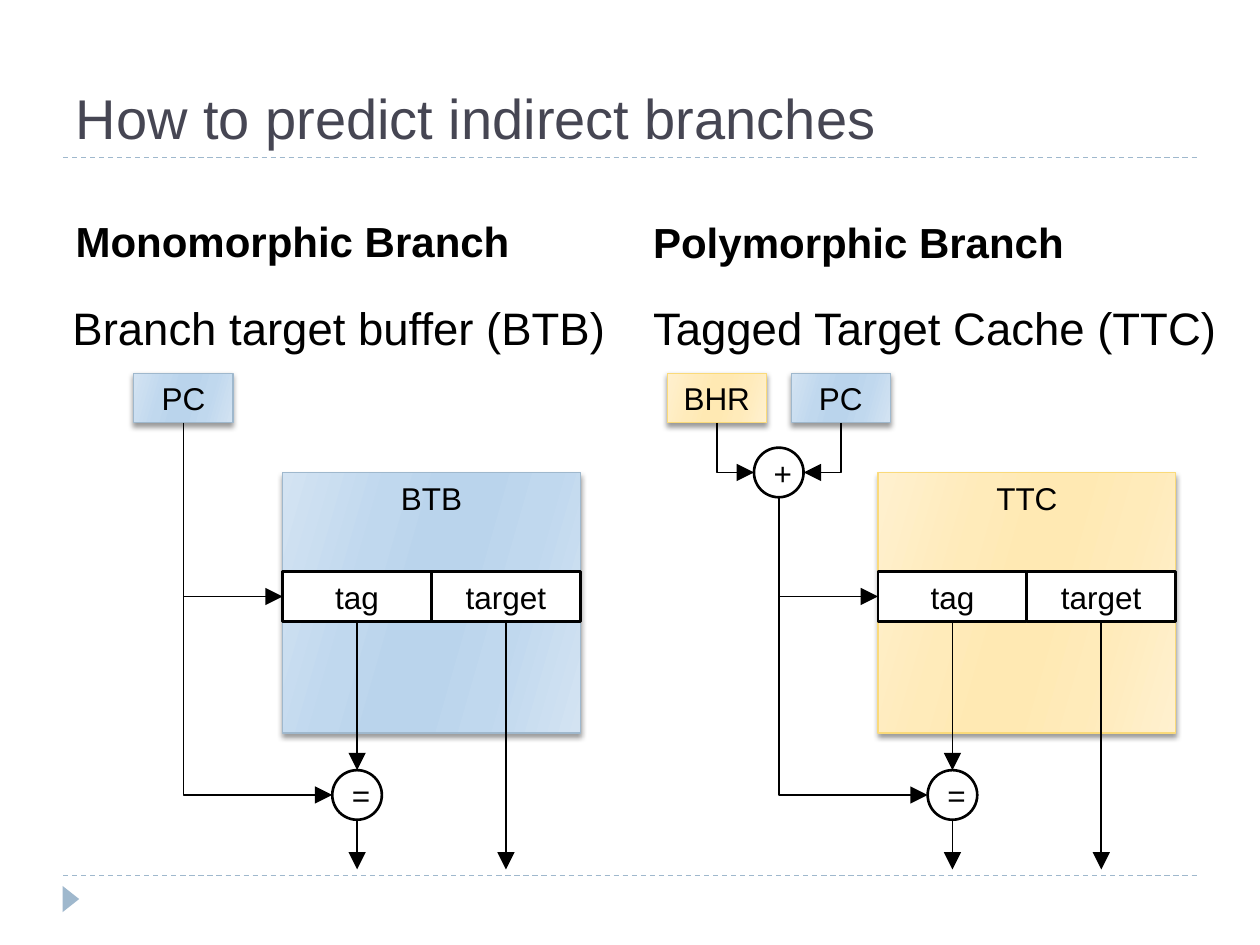
import pptx
import pptx.dml.color
import pptx.enum.dml
import pptx.enum.shapes
import pptx.enum.text
import pptx.oxml
import pptx.oxml.ns
import pptx.util

Pt = pptx.util.Pt
RGBColor = pptx.dml.color.RGBColor
SHAPE = pptx.enum.shapes.MSO_SHAPE
STRAIGHT = pptx.enum.shapes.MSO_CONNECTOR.STRAIGHT
ANCHOR = pptx.enum.text.MSO_ANCHOR
ALIGN = pptx.enum.text.PP_ALIGN
NS = pptx.oxml.ns.nsdecls("a")

BLACK = RGBColor(0x00, 0x00, 0x00)
WHITE = RGBColor(0xFF, 0xFF, 0xFF)
SLATE = RGBColor(0x46, 0x46, 0x53)
STEEL = RGBColor(0x9F, 0xB8, 0xCD)
GOLD = RGBColor(0xFA, 0xDA, 0x7A)
BLUES = [RGBColor(0xD3, 0xE3, 0xF2), RGBColor(0xC0, 0xD8, 0xEE), RGBColor(0xBA, 0xD4, 0xEC)]
YELLOWS = [RGBColor(0xFF, 0xF0, 0xCF), RGBColor(0xFF, 0xEB, 0xBA), RGBColor(0xFF, 0xE9, 0xB3)]
GRADIENT_STOPS = [(0, 0), (30, 1), (45, 2), (55, 2), (73, 1), (100, 0)]

UNIT = 28.35
TOP = 213.3
BTB_LEFT = 76.5
TTC_LEFT = BTB_LEFT + 12 * UNIT


def write(holder, text, size=18, color=BLACK, bold=False, align=ALIGN.CENTER,
          anchor=ANCHOR.MIDDLE, before=0):
    frame = holder.text_frame
    frame.word_wrap = True
    frame.auto_size = pptx.enum.text.MSO_AUTO_SIZE.NONE
    frame.vertical_anchor = anchor
    paragraph = frame.paragraphs[0]
    paragraph.alignment = align
    paragraph.space_before = Pt(before)
    run = paragraph.add_run()
    run.text = text
    run.font.name = "Arial"
    run.font.size = Pt(size)
    run.font.bold = bold
    run.font.color.rgb = color


prs = pptx.Presentation()
prs.slide_width, prs.slide_height = Pt(720), Pt(540)
slide = prs.slides.add_slide(prs.slide_layouts[4])
shapes = slide.shapes

for y in (90, 500.4):
    rule = shapes.add_connector(STRAIGHT, Pt(36), Pt(y), Pt(684), Pt(y))
    rule.line.color.rgb = STEEL
    rule.line.width = Pt(0.75)
    rule.line.dash_style = pptx.enum.dml.MSO_LINE.DASH
    rule._element.spPr.append(pptx.oxml.parse_xml(f"<a:effectLst {NS}/>"))

marker = shapes.add_shape(SHAPE.ISOSCELES_TRIANGLE, Pt(33), Pt(509), Pt(15), Pt(9.5))
marker.rotation = 90
marker.shadow.inherit = False
marker.fill.solid()
marker.fill.fore_color.rgb = STEEL
marker.line.fill.background()

headings = [
    (0, "How to predict indirect branches", (36, 18, 648, 72),
     dict(size=32, color=SLATE, anchor=ANCHOR.BOTTOM, align=ALIGN.LEFT)),
    (1, "Monomorphic Branch", (36, 101.5, 318, 54),
     dict(size=24, bold=True, anchor=ANCHOR.BOTTOM, align=ALIGN.LEFT, before=6)),
    (3, "Polymorphic Branch", (366, 102, 318, 54),
     dict(size=24, bold=True, anchor=ANCHOR.BOTTOM, align=ALIGN.LEFT, before=6)),
    (2, "Branch target buffer (BTB)", (26.5, 168, 327, 45),
     dict(size=26, anchor=ANCHOR.TOP, align=ALIGN.RIGHT, before=6)),
    (4, "Tagged Target Cache (TTC)", (366, 168, 341, 45),
     dict(size=26, anchor=ANCHOR.TOP, align=ALIGN.LEFT, before=6)),
]
for index, text, box, style in headings:
    heading = slide.placeholders[index]
    heading.left, heading.top, heading.width, heading.height = map(Pt, box)
    write(heading, text, **style)
    if index:
        properties = heading.text_frame.paragraphs[0]._p.get_or_add_pPr()
        properties.set("marL", "0")
        properties.set("indent", "0")
        properties.append(pptx.oxml.parse_xml(f"<a:buNone {NS}/>"))

blocks = [
    (BTB_LEFT, 3, 2, 6, 5.25, "BTB", BLUES, STEEL),
    (BTB_LEFT, 0, 0, 2, 1, "PC", BLUES, STEEL),
    (TTC_LEFT, 3, 2, 6, 5.25, "TTC", YELLOWS, GOLD),
    (TTC_LEFT, 1.25, 0, 2, 1, "PC", BLUES, STEEL),
    (TTC_LEFT, -1.25, 0, 2, 1, "BHR", YELLOWS, GOLD),
]
for left, column, row, width, height, label, shades, edge in blocks:
    block = shapes.add_shape(SHAPE.RECTANGLE, Pt(left + column * UNIT), Pt(TOP + row * UNIT),
                             Pt(width * UNIT), Pt(height * UNIT))
    block.fill.gradient()
    block.fill.gradient_angle = 344
    stops = block._element.spPr.find(".//" + pptx.oxml.ns.qn("a:gsLst"))
    for stop in list(stops):
        stops.remove(stop)
    for position, shade in GRADIENT_STOPS:
        stops.append(pptx.oxml.parse_xml(
            f'<a:gs {NS} pos="{position * 1000}"><a:srgbClr val="{shades[shade]}"/></a:gs>'))
    block.line.color.rgb = edge
    block.line.width = Pt(0.75)
    block.shadow.inherit = False
    block._element.spPr.find(pptx.oxml.ns.qn("a:effectLst")).append(pptx.oxml.parse_xml(
        f'<a:outerShdw {NS} blurRad="{Pt(3)}" dist="{Pt(2)}" dir="5400000" rotWithShape="0">'
        '<a:srgbClr val="000000"><a:alpha val="40000"/></a:srgbClr></a:outerShdw>'))
    write(block, label, anchor=ANCHOR.TOP if height > 1 else ANCHOR.MIDDLE)

fields = [(TTC_LEFT, SHAPE.OVAL, 0.5, 1.5, 1, "+")]
for left in (BTB_LEFT, TTC_LEFT):
    fields += [
        (left, SHAPE.RECTANGLE, 3, 4, 3, "tag"),
        (left, SHAPE.RECTANGLE, 6, 4, 3, "target"),
        (left, SHAPE.OVAL, 4, 8, 1, "="),
    ]
for left, outline, column, row, width, label in fields:
    field = shapes.add_shape(outline, Pt(left + column * UNIT), Pt(TOP + row * UNIT),
                             Pt(width * UNIT), Pt(UNIT))
    field.shadow.inherit = False
    field.fill.solid()
    field.fill.fore_color.rgb = WHITE
    field.line.color.rgb = BLACK
    field.line.width = Pt(1.5)
    write(field, label)

arrows = [(TTC_LEFT, -0.25, 1, 0.5, 2), (TTC_LEFT, 2.25, 1, 1.5, 2)]
for left, source_row in ((BTB_LEFT, 1), (TTC_LEFT, 2.5)):
    arrows += [
        (left, 1, source_row, 3, 4.5),
        (left, 1, source_row, 4, 8.5),
        (left, 4.5, 5, 4.5, 8),
        (left, 4.5, 9, 4.5, 10),
        (left, 7.5, 5, 7.5, 10),
    ]
for left, x1, y1, x2, y2 in arrows:
    arrow = shapes.add_connector(STRAIGHT, Pt(left + x1 * UNIT), Pt(TOP + y1 * UNIT),
                                 Pt(left + x2 * UNIT), Pt(TOP + y2 * UNIT))
    properties = arrow._element.spPr
    if x1 != x2:
        across, down = abs(x2 - x1), y2 - y1
        arrow.left = Pt(left + ((x1 + x2) - down) / 2 * UNIT)
        arrow.top = Pt(TOP + ((y1 + y2) - across) / 2 * UNIT)
        arrow.width, arrow.height = Pt(down * UNIT), Pt(across * UNIT)
        properties.prstGeom.set("prst", "bentConnector2")
        properties.xfrm.set("rot", "16200000" if x2 > x1 else "5400000")
        properties.xfrm.set("flipH", "1" if x2 > x1 else "0")
    arrow.line.color.rgb = BLACK
    arrow.line.width = Pt(1)
    arrow.line._get_or_add_ln().append(
        pptx.oxml.parse_xml(f'<a:tailEnd {NS} type="triangle" w="lg" len="lg"/>'))
    properties.append(pptx.oxml.parse_xml(f"<a:effectLst {NS}/>"))

prs.save("out.pptx")
